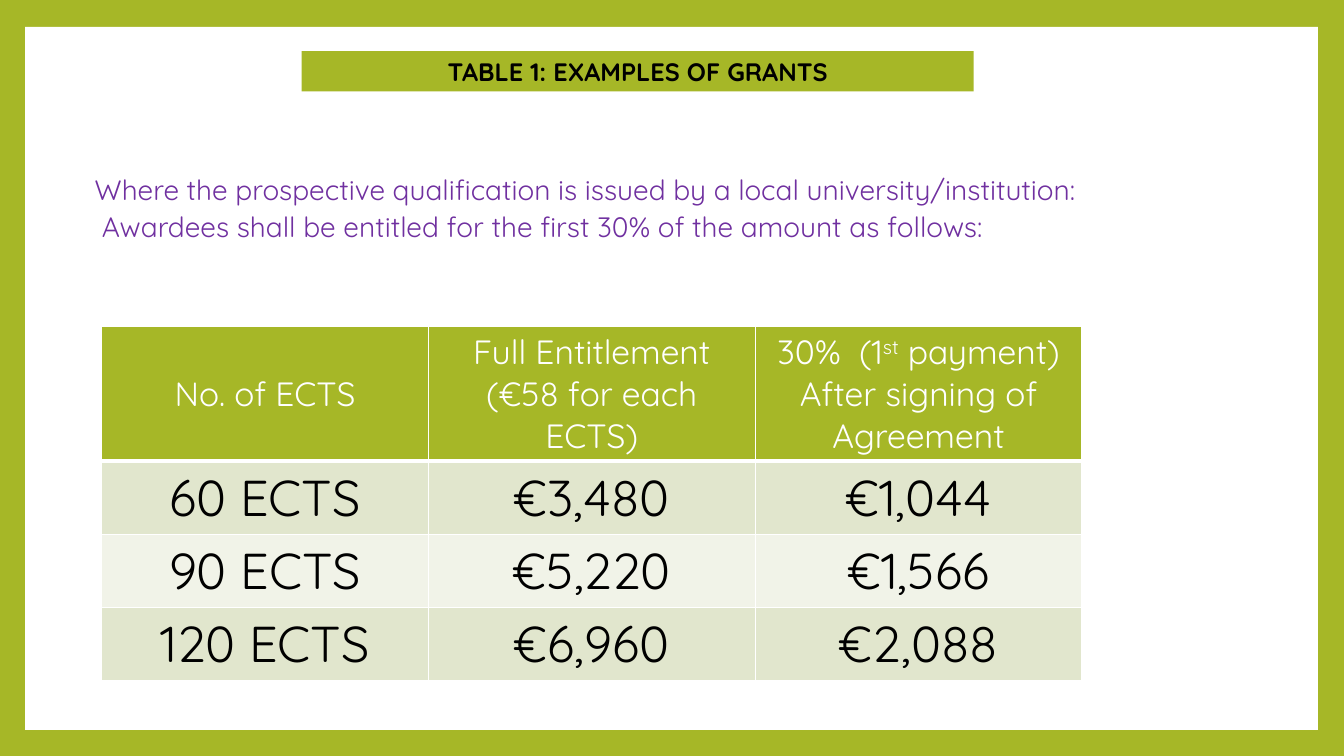
"""Build the slide with the table of grant examples."""
from dataclasses import dataclass

from lxml import etree
from pptx import Presentation
from pptx import util as u
from pptx.dml.color import RGBColor
from pptx.enum import shapes, text
from pptx.oxml.ns import qn


@dataclass(frozen=True)
class Theme:
    font: str = "Quicksand"
    green: str = "A6B727"
    white: str = "FFFFFF"
    black: str = "000000"
    purple: str = "7030A0"
    bands: tuple = ("E1E6CD", "F1F3E8")
    title_size: int = 18
    intro_size: int = 20
    heading_size: int = 24
    amount_size: int = 36
    thin: int = 1
    thick: int = 3


class GrantSlide:
    COLUMNS, ROWS = 160, 90

    def __init__(self, deck, theme):
        self.deck, self.theme = deck, theme
        self.slide = deck.slides.add_slide(deck.slide_layouts[6])
        self.paint(self.slide.background, theme.green)

    def paint(self, target, color):
        target.fill.solid()
        target.fill.fore_color.rgb = RGBColor.from_string(color)

    def across(self, columns):
        return round(self.deck.slide_width * columns / self.COLUMNS)

    def down(self, rows):
        return round(self.deck.slide_height * rows / self.ROWS)

    def place(self, left, top, width, height):
        return self.across(left), self.down(top), self.across(width), self.down(height)

    def set_lines(self, frame, lines, size, color, align, bold=False):
        frame.text = "\n".join("".join(line) for line in lines)
        for paragraph, line in zip(frame.paragraphs, lines):
            paragraph.alignment = align
            if not isinstance(line, str):
                paragraph.text = line[0]
                for piece in line[1:]:
                    paragraph.add_run().text = piece
                paragraph.runs[1].font._element.set("baseline", "30000")
            for run in paragraph.runs:
                run.font.name = self.theme.font
                run.font.size = u.Pt(size)
                run.font.bold = bold
                run.font.color.rgb = RGBColor.from_string(color)

    def panel(self, area, color):
        panel = self.slide.shapes.add_shape(shapes.MSO_SHAPE.RECTANGLE, *self.place(*area))
        panel.shadow.inherit = False
        self.paint(panel, color)
        panel.line.fill.background()
        return panel

    def banner(self, area, title):
        frame = self.panel(area, self.theme.green).text_frame
        frame.vertical_anchor = text.MSO_ANCHOR.MIDDLE
        self.set_lines(frame, [title], self.theme.title_size, self.theme.black,
                       text.PP_ALIGN.CENTER, bold=True)

    def intro(self, area, lines):
        frame = self.slide.shapes.add_textbox(*self.place(*area)).text_frame
        frame.word_wrap = True
        self.set_lines(frame, lines, self.theme.intro_size, self.theme.purple,
                       text.PP_ALIGN.JUSTIFY)
        for paragraph in frame.paragraphs:
            paragraph.line_spacing = 0.9
            paragraph.space_after = u.Pt(4.6)
        frame.paragraphs[-1]._p.get_or_add_pPr().set("indent", str(u.Inches(0.07)))

    def borders(self, cell, **widths):
        properties = cell._tc.get_or_add_tcPr()
        for side, width in widths.items():
            edge = etree.SubElement(properties, qn(f"a:ln{side}"), w=str(u.Pt(width)))
            solid = etree.SubElement(edge, qn("a:solidFill"))
            etree.SubElement(solid, qn("a:srgbClr"), val=self.theme.white)

    def grants(self, area, headings, amounts, heading_rows):
        theme = self.theme
        grid = self.slide.shapes.add_table(
            len(amounts) + 1, len(headings), *self.place(*area)).table
        body_rows = (area[3] - heading_rows) / len(amounts)
        for index, row in enumerate([headings, *amounts]):
            is_heading = index == 0
            grid.rows[index].height = self.down(heading_rows if is_heading else body_rows)
            fill = theme.green if is_heading else theme.bands[(index - 1) % 2]
            size = theme.heading_size if is_heading else theme.amount_size
            color = theme.white if is_heading else theme.black
            for column, lines in enumerate(row):
                cell = grid.cell(index, column)
                cell.vertical_anchor = text.MSO_ANCHOR.MIDDLE
                self.set_lines(cell.text_frame, lines, size, color, text.PP_ALIGN.CENTER)
                self.borders(cell, L=theme.thin, R=theme.thin,
                             T=theme.thick if index == 1 else theme.thin,
                             B=theme.thick if is_heading else theme.thin)
                self.paint(cell, fill)


def main():
    deck = Presentation()
    deck.slide_width, deck.slide_height = u.Inches(13.33), u.Inches(7.5)
    theme = Theme()
    page = GrantSlide(deck, theme)
    page.panel((3, 3.2, 153.9, 83.7), theme.white)
    page.intro((10.1, 20.4, 142.6, 10), [
        "Where the prospective qualification is issued by a local university/institution:",
        "Awardees shall be entitled for the first 30% of the amount as follows:",
    ])
    headings = [
        ["No. of ECTS"],
        ["Full Entitlement", "(€58 for each ECTS)"],
        [("30%  (1", "st", " payment)"), "After signing of Agreement"],
    ]
    amounts = [
        [["60 ECTS"], ["€3,480"], ["€1,044"]],
        [["90 ECTS"], ["€5,220"], ["€1,566"]],
        [["120 ECTS"], ["€6,960"], ["€2,088"]],
    ]
    page.grants((12.1, 38.8, 116.7, 42.2), headings, amounts, heading_rows=16.1)
    page.banner((35.9, 6.1, 80, 4.8), "TABLE 1: EXAMPLES OF GRANTS")
    deck.save("out.pptx")


if __name__ == "__main__":
    main()
